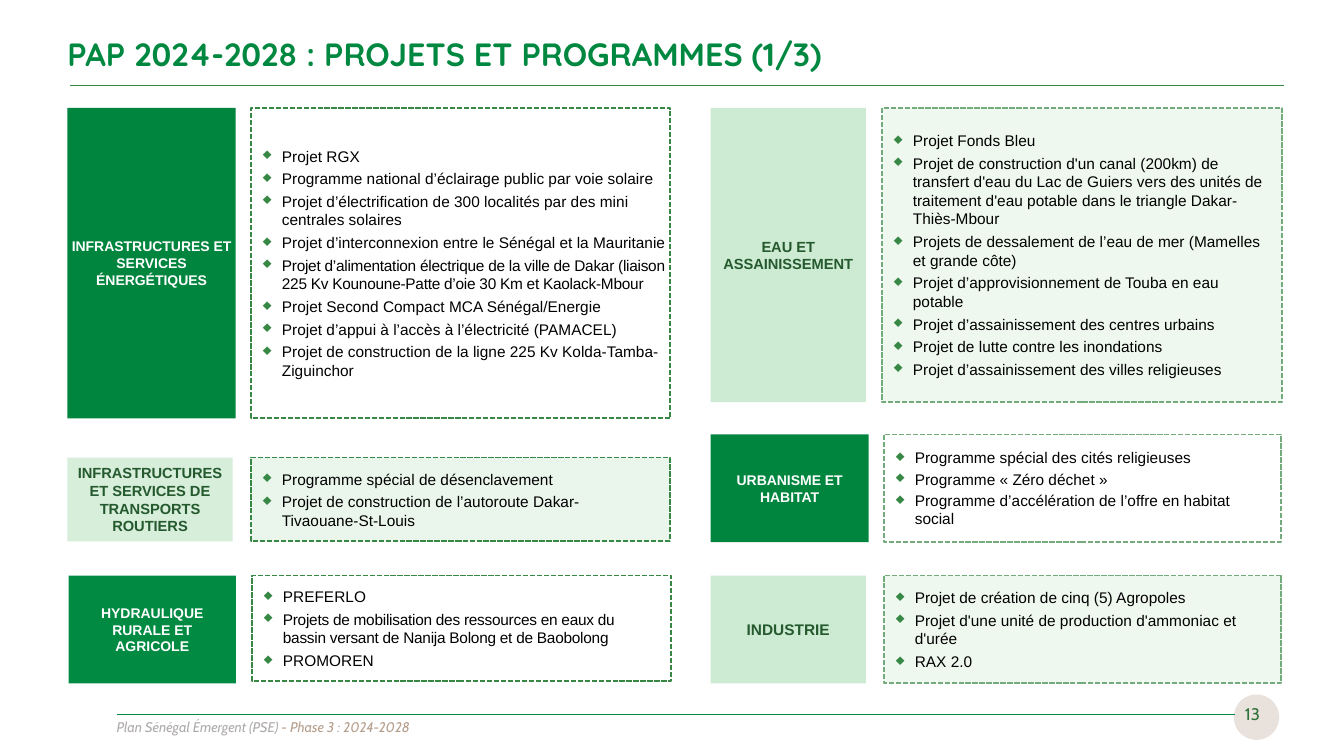
from lxml import etree
from pptx import Presentation
from pptx.dml.color import RGBColor
from pptx.enum.dml import MSO_LINE
from pptx.enum.shapes import MSO_CONNECTOR, MSO_SHAPE
from pptx.enum.text import MSO_ANCHOR, PP_ALIGN
from pptx.oxml.ns import qn
from pptx.util import Pt

LEFT, CENTER, RIGHT = PP_ALIGN.LEFT, PP_ALIGN.CENTER, PP_ALIGN.RIGHT
TOP, MIDDLE = MSO_ANCHOR.TOP, MSO_ANCHOR.MIDDLE
RECT, OVAL = MSO_SHAPE.RECTANGLE, MSO_SHAPE.OVAL
DASH, STRAIGHT = MSO_LINE.SQUARE_DOT, MSO_CONNECTOR.STRAIGHT

HUES = {
    "brand": "008740", "deep": "00853F", "fresh": "008A42", "edge": "388845",
    "soft": "73AB7D", "mint": "CDEBD2", "pale": "D6EEDA", "mist": "EEF8EF",
    "haze": "EAF6EC", "dark": "25592E", "page": "2F713A", "white": "FFFFFF",
    "black": "000000", "gray": "AFABAB", "tan": "B69F8D", "sand": "E8E1DC",
}
TIGHT = -20
GAP = 13.5

TITLE = "PAP 2024-2028 : PROJETS ET PROGRAMMES (1/3)"
FOOTER = [("Plan Sénégal Émergent (PSE) ", {"hue": "gray"}),
          ("- Phase 3 : 2024-2028", {"hue": "tan"})]
PAGE = "13"

THEMES = [
    dict(name="INFRASTRUCTURES ET SERVICES ÉNERGÉTIQUES",
         label=(48.2, 120.2, "deep", "white", 10, 2.9),
         panel=(179.3, 299.5, "white", "edge", 0, 3), top=77, high=221.8, items=[
             "Projet RGX",
             "Programme national d’éclairage public par voie solaire",
             "Projet d’électrification de 300 localités par des mini centrales solaires",
             "Projet d’interconnexion entre le Sénégal et la Mauritanie",
             [("Projet d’alimentation électrique de la ville de Dakar (liaison "
               "225 Kv Kounoune-Patte d’oie 30 Km et Kaolack-Mbour", {"track": TIGHT})],
             "Projet Second Compact MCA Sénégal/Energie",
             "Projet d’appui à l’accès à l’électricité (PAMACEL)",
             "Projet de construction de la ligne 225 Kv Kolda-Tamba-Ziguinchor"]),
    dict(name="EAU ET ASSAINISSEMENT",
         label=(507.6, 111, "mint", "dark", 10.5, 7.2),
         panel=(630, 285.8, "mist", "soft", 5.8, 3), top=77, high=210.2, items=[
             "Projet Fonds Bleu",
             "Projet de construction d'un canal (200km) de transfert d'eau du Lac de Guiers "
             "vers des unités de traitement d'eau potable dans le triangle Dakar-Thiès-Mbour",
             "Projets de dessalement de l’eau de mer (Mamelles et grande côte)",
             "Projet d’approvisionnement de Touba en eau potable",
             "Projet d’assainissement des centres urbains",
             "Projet de lutte contre les inondations",
             "Projet d’assainissement des villes religieuses"]),
    dict(name="URBANISME ET HABITAT",
         label=(507.6, 113, "deep", "white", 10, 7.2),
         panel=(631.4, 283.7, "white", "soft", 14.4, 2), top=310.3, high=77, items=[
             "Programme spécial des cités religieuses",
             "Programme « Zéro déchet »",
             "Programme d’accélération de l’offre en habitat social"]),
    dict(name="HYDRAULIQUE RURALE ET AGRICOLE",
         label=(49, 119.5, "fresh", "white", 10, 7.2),
         panel=(180, 299.5, "white", "edge", 14.4, 3), top=411.1, high=77, trim=1.4, items=[
             "PREFERLO",
             [("Projets de mobilisation des ressources en eaux du bassin versant "
               "de Nanija Bolong et de Baobolong", {"track": TIGHT})],
             "PROMOREN"]),
    dict(name="INFRASTRUCTURES ET SERVICES DE TRANSPORTS ROUTIERS",
         label=(48.2, 118.1, "pale", "dark", 10.5, 2.9),
         panel=(179.3, 299.5, "haze", "edge", 14.4, 3), top=326.9, high=59.8, items=[
             "Programme spécial de désenclavement",
             "Projet de construction de l’autoroute Dakar-Tivaouane-St-Louis"]),
    dict(name="INDUSTRIE",
         label=(507.6, 111, "mint", "dark", 11, 7.2),
         panel=(631.4, 283.7, "mist", "soft", 14.4, 3), top=411.1, high=77, items=[
             "Projet de création de cinq (5) Agropoles",
             "Projet d'une unité de production d'ammoniac et d'urée",
             "RAX 2.0"]),
]


def color(name):
    return RGBColor.from_string(HUES[name])


def write(shape, lines, size=11, font="Arial", hue="black", bold=False, italic=False,
          align=LEFT, anchor=MIDDLE, left=7.2, right=7.2, after=0, bullet=None):
    frame = shape.text_frame
    frame.word_wrap = True
    frame.vertical_anchor = anchor
    frame.margin_left, frame.margin_right = Pt(left), Pt(right)
    frame.margin_top = frame.margin_bottom = Pt(3.6)
    for rank, line in enumerate(lines):
        para = frame.add_paragraph() if rank else frame.paragraphs[0]
        para.alignment = align
        para.space_after = Pt(after)
        if bullet:
            props = para._p.get_or_add_pPr()
            props.set("marL", str(Pt(GAP)))
            props.set("indent", str(-Pt(GAP)))
            tint = etree.SubElement(props, qn("a:buClr"))
            etree.SubElement(tint, qn("a:srgbClr"), val=HUES["edge"])
            etree.SubElement(props, qn("a:buChar"), char=bullet)
        for words, extra in [(line, {})] if isinstance(line, str) else line:
            run = para.add_run()
            run.text = words
            run.font.name, run.font.size = font, Pt(size)
            run.font.bold, run.font.italic = bold, italic
            run.font.color.rgb = color(extra.get("hue", hue))
            if "track" in extra:
                run._r.get_or_add_rPr().set("spc", str(extra["track"]))


def block(kind, x, y, w, h, fill, edge=None):
    shape = slide.shapes.add_shape(kind, Pt(x), Pt(y), Pt(w), Pt(h))
    shape.shadow.inherit = False
    shape.fill.solid()
    shape.fill.fore_color.rgb = color(fill)
    if edge:
        shape.line.color.rgb = color(edge)
        shape.line.width = Pt(1.25)
        shape.line.dash_style = DASH
    else:
        shape.line.fill.background()
    return shape


def rule(start, end, y, hue):
    line = slide.shapes.add_connector(STRAIGHT, Pt(start), Pt(y), Pt(end), Pt(y))
    line.line.color.rgb = color(hue)
    line.line.width = Pt(1)
    etree.SubElement(line._element.spPr, qn("a:effectLst"))


def box(x, y, w, h):
    return slide.shapes.add_textbox(Pt(x), Pt(y), Pt(w), Pt(h))


deck = Presentation()
deck.slide_width, deck.slide_height = Pt(960), Pt(540)
slide = deck.slides.add_slide(deck.slide_layouts[6])

block(OVAL, 881.3, 496.1, 32.4, 32.4, "sand")
write(box(76.3, 509.8, 693.4, 19.4), [FOOTER], size=10, font="Cabin",
      italic=True, anchor=TOP)
rule(83.5, 882, 510.5, "brand")
write(box(866.2, 495.4, 41, 28.8), [PAGE], size=12, font="Cabin", hue="page", align=RIGHT)
write(box(41, 20.9, 762.5, 35.3), [TITLE], size=23, font="Quicksand", hue="brand", bold=True)
rule(49.7, 917.3, 61.2, "edge")

for theme in THEMES:
    top, high = theme["top"], theme["high"]
    x, w, fill, edge, right, after = theme["panel"]
    panel = block(RECT, x, top, w, high - theme.get("trim", 0), fill, edge)
    write(panel, theme["items"], left=8.6, right=right, after=after, bullet="♦")
    x, w, fill, hue, size, inset = theme["label"]
    label = block(RECT, x, top, w, high, fill)
    write(label, [theme["name"]], size=size, hue=hue, bold=True, align=CENTER,
          left=inset, right=inset)

deck.save("out.pptx")
